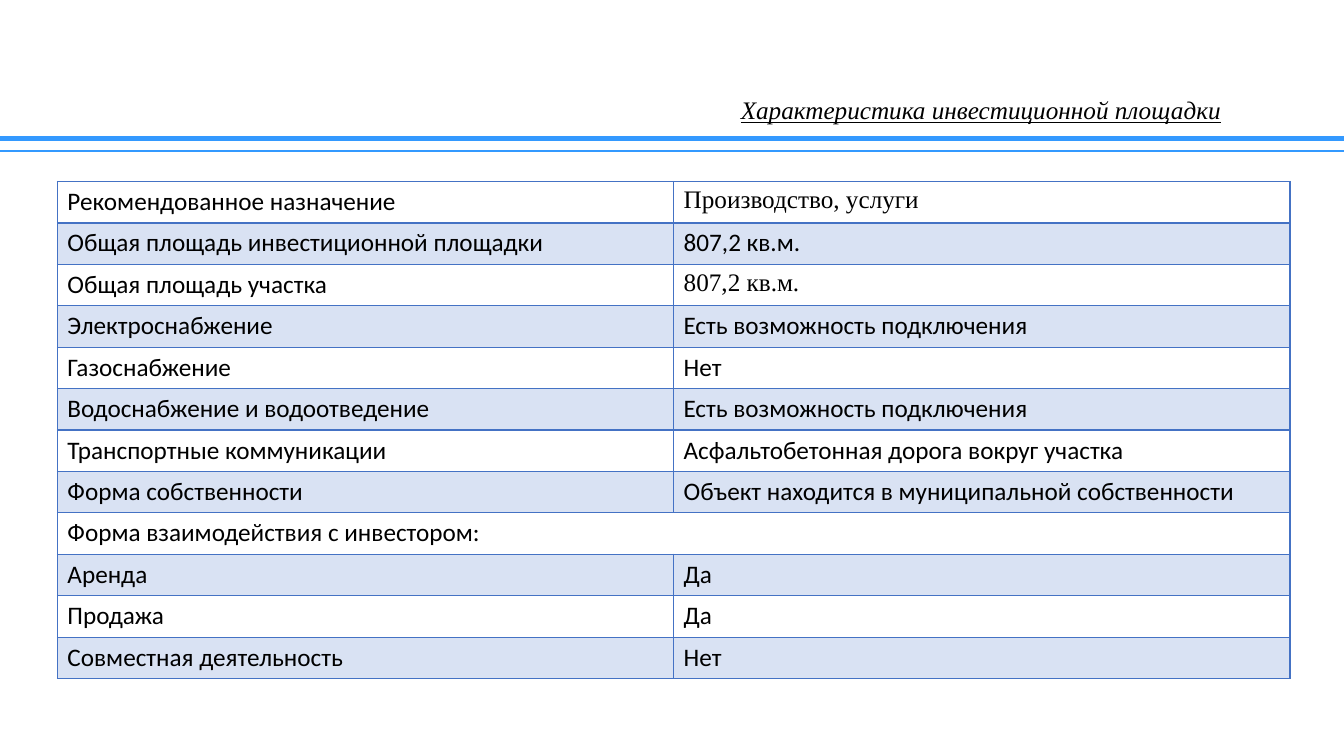
import pptx
import pptx.dml.color
import pptx.enum.shapes
import pptx.enum.text
import pptx.oxml.ns
import pptx.util
from dataclasses import dataclass
from lxml import etree

Pt = pptx.util.Pt


@dataclass(frozen=True)
class Theme:
    rule: str = "3399FF"
    grid: str = "4472C4"
    ink: str = "000000"
    paper: str = "FFFFFF"
    band_opacity: int = 20
    size: int = 18
    sans: str = "Calibri"
    serif: str = "Times New Roman"


THEME = Theme()
SLIDE_WIDTH, SLIDE_HEIGHT = 960, 540
TABLE_LEFT, TABLE_TOP = 41, 129.6
COLUMN_WIDTH, ROW_HEIGHT = 440.2, 29.6

TITLE = "Характеристика инвестиционной площадки"
ROWS = [
    ("Рекомендованное назначение", "Производство, услуги"),
    ("Общая площадь инвестиционной площадки", "807,2 кв.м."),
    ("Общая площадь участка", "807,2 кв.м."),
    ("Электроснабжение", "Есть возможность подключения"),
    ("Газоснабжение", "Нет"),
    ("Водоснабжение и водоотведение", "Есть возможность подключения"),
    ("Транспортные коммуникации", "Асфальтобетонная дорога вокруг участка"),
    ("Форма собственности", "Объект находится в муниципальной собственности"),
    ("Форма взаимодействия с инвестором:",),
    ("Аренда", "Да"),
    ("Продажа", "Да"),
    ("Совместная деятельность", "Нет"),
]
SERIF_CELLS = {(0, 1), (2, 1)}


def color(value):
    return pptx.dml.color.RGBColor.from_string(value)


def add_xml(parent, tag, **attributes):
    return etree.SubElement(parent, pptx.oxml.ns.qn(tag), attributes)


def write_text(frame, text, font=THEME.sans, italic=False, underline=False,
               align=None, spacing=None):
    para = frame.paragraphs[0]
    para.alignment = align
    para.line_spacing = spacing
    span = para.add_run()
    span.text = text
    span.font.name = font
    span.font.size = Pt(THEME.size)
    span.font.bold = False
    span.font.italic = italic
    span.font.underline = underline
    span.font.color.rgb = color(THEME.ink)


def place_title(page):
    title = page.shapes.title
    title.left, title.top = Pt(480), Pt(69.8)
    title.width, title.height = Pt(441.4), Pt(19.4)
    frame = title.text_frame
    frame.word_wrap = True
    frame.auto_size = pptx.enum.text.MSO_AUTO_SIZE.NONE
    frame.vertical_anchor = pptx.enum.text.MSO_ANCHOR.MIDDLE
    write_text(frame, TITLE, font=THEME.serif, italic=True, underline=True,
               align=pptx.enum.text.PP_ALIGN.CENTER, spacing=0.9)


def add_rule(page, top, weight):
    rule = page.shapes.add_connector(pptx.enum.shapes.MSO_CONNECTOR.STRAIGHT,
                                     0, Pt(top), Pt(SLIDE_WIDTH), Pt(top))
    rule.line.color.rgb = color(THEME.rule)
    rule.line.width = Pt(weight)
    add_xml(rule._element.spPr, "a:effectLst")


def set_borders(cell, bottom):
    properties = cell._tc.get_or_add_tcPr()
    for side, weight in (("L", 1), ("R", 1), ("T", 1), ("B", bottom)):
        edge = add_xml(properties, f"a:ln{side}", w=str(Pt(weight)))
        add_xml(add_xml(edge, "a:solidFill"), "a:srgbClr", val=THEME.grid)


def fill_cell(cell, banded):
    cell.fill.solid()
    cell.fill.fore_color.rgb = color(THEME.grid if banded else THEME.paper)
    if banded:
        tint = cell._tc.tcPr.find(pptx.oxml.ns.qn("a:solidFill"))[0]
        add_xml(tint, "a:alpha", val=str(THEME.band_opacity * 1000))


def add_site_table(page):
    table = page.shapes.add_table(
        len(ROWS), 2, Pt(TABLE_LEFT), Pt(TABLE_TOP),
        Pt(2 * COLUMN_WIDTH), Pt(len(ROWS) * ROW_HEIGHT)).table
    table.first_row = table.horz_banding = False
    for column in table.columns:
        column.width = Pt(COLUMN_WIDTH)
    for row_index, texts in enumerate(ROWS):
        table.rows[row_index].height = Pt(ROW_HEIGHT)
        for cell in table.rows[row_index].cells:
            set_borders(cell, bottom=2 if row_index == 0 else 1)
            fill_cell(cell, banded=row_index % 2 == 1)
        if len(texts) == 1:
            table.cell(row_index, 0).merge(table.cell(row_index, 1))
        for column_index, text in enumerate(texts):
            serif = (row_index, column_index) in SERIF_CELLS
            write_text(table.cell(row_index, column_index).text_frame, text,
                       font=THEME.serif if serif else THEME.sans)


def main():
    deck = pptx.Presentation()
    deck.slide_width, deck.slide_height = Pt(SLIDE_WIDTH), Pt(SLIDE_HEIGHT)
    page = deck.slides.add_slide(deck.slide_layouts.get_by_name("Title Only"))
    add_rule(page, top=99.2, weight=3.5)
    add_rule(page, top=108, weight=1.5)
    place_title(page)
    add_site_table(page)
    deck.save("out.pptx")


if __name__ == "__main__":
    main()
